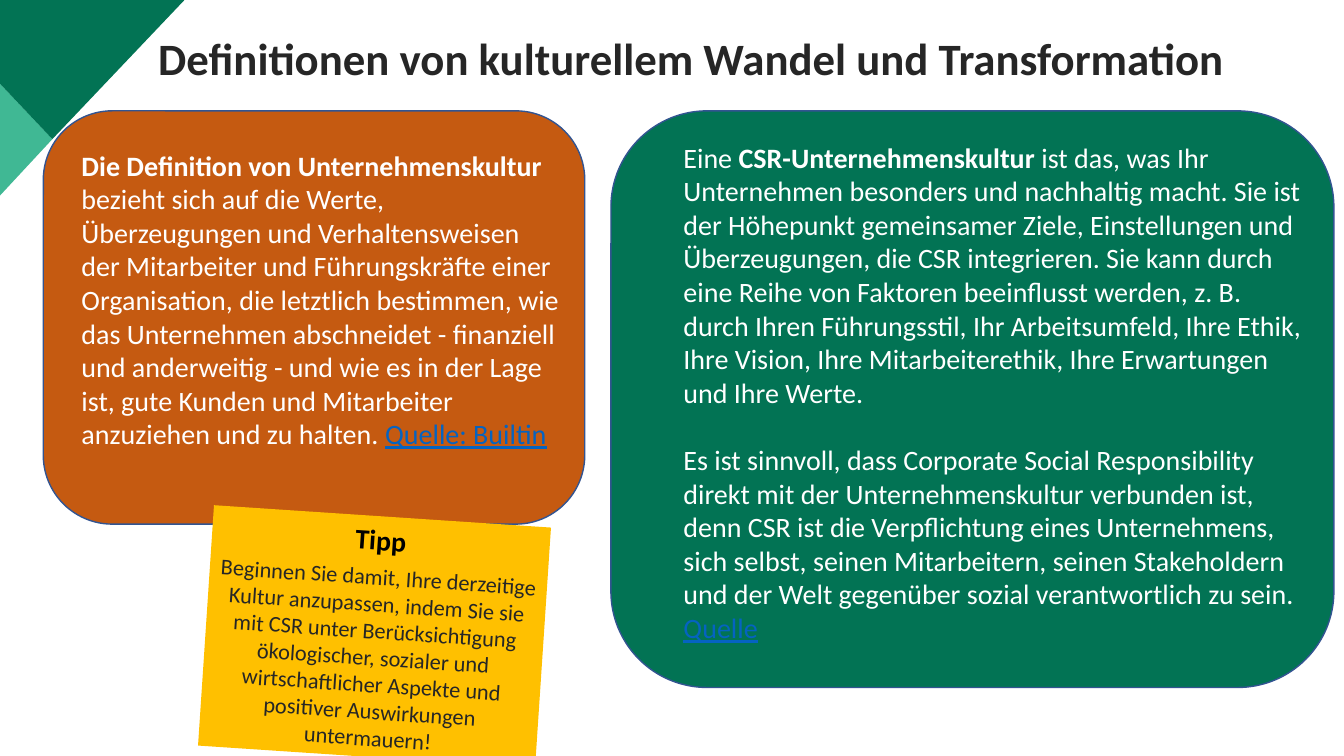
from pptx import Presentation
from pptx.dml.color import RGBColor
from pptx.enum.shapes import MSO_SHAPE
from pptx.enum.text import MSO_ANCHOR, PP_ALIGN
from pptx.util import Inches, Pt

ROUNDED, RECTANGLE = MSO_SHAPE.ROUNDED_RECTANGLE, MSO_SHAPE.RECTANGLE
TOP, MIDDLE = MSO_ANCHOR.TOP, MSO_ANCHOR.MIDDLE
LEFT, CENTER = PP_ALIGN.LEFT, PP_ALIGN.CENTER

MINT = RGBColor(0x40, 0xB8, 0x94)
GREEN = RGBColor(0x02, 0x73, 0x54)
ORANGE = RGBColor(0xC5, 0x5A, 0x11)
YELLOW = RGBColor(0xFF, 0xC0, 0x00)
OUTLINE = RGBColor(0x32, 0x54, 0x91)
LINK = RGBColor(0x05, 0x63, 0xC1)
DARK = RGBColor(0x26, 0x26, 0x26)
BLACK = RGBColor(0, 0, 0)
WHITE = RGBColor(0xFF, 0xFF, 0xFF)

BOLD = {"bold": True}
SOURCE = {"color": LINK, "underline": True}

CORNER = [
    (MINT, [(0, 0.83), (0.52, 1.38), (0, 1.94)]),
    (GREEN, [(0, 0), (1.83, 0), (0.52, 1.38), (0, 0.83)]),
]

TITLE = [[("Definitionen von kulturellem Wandel und Transformation", BOLD)]]

CULTURE = [[
    ("Die Definition von Unternehmenskultur ", BOLD),
    ("bezieht sich auf die Werte, Überzeugungen und Verhaltensweisen der "
     "Mitarbeiter und Führungskräfte einer Organisation, die letztlich "
     "bestimmen, wie das Unternehmen abschneidet - finanziell und "
     "anderweitig - und wie es in der Lage ist, gute Kunden und Mitarbeiter "
     "anzuziehen und zu halten. ", {}),
    ("Quelle: Builtin", SOURCE),
]]

CSR = [
    [
        ("Eine ", {}),
        ("CSR-Unternehmenskultur", BOLD),
        (" ist das, was Ihr Unternehmen besonders und nachhaltig macht. Sie "
         "ist der Höhepunkt gemeinsamer Ziele, Einstellungen und "
         "Überzeugungen, die CSR integrieren. Sie kann durch eine Reihe von "
         "Faktoren beeinflusst werden, z. B. durch Ihren Führungsstil, Ihr "
         "Arbeitsumfeld, Ihre Ethik, Ihre Vision, Ihre Mitarbeiterethik, Ihre "
         "Erwartungen und Ihre Werte.", {}),
    ],
    [
        ("Es ist sinnvoll, dass Corporate Social Responsibility direkt mit "
         "der Unternehmenskultur verbunden ist, denn CSR ist die "
         "Verpflichtung eines Unternehmens, sich selbst, seinen Mitarbeitern, "
         "seinen Stakeholdern und der Welt gegenüber sozial verantwortlich zu "
         "sein. ", {}),
        ("Quelle", SOURCE),
    ],
]

TIP = [
    [("Tipp", {"bold": True, "size": 20, "color": BLACK})],
    [("Beginnen Sie damit, Ihre derzeitige Kultur anzupassen, indem Sie sie "
      "mit CSR unter Berücksichtigung ökologischer, sozialer und "
      "wirtschaftlicher Aspekte und positiver Auswirkungen untermauern!", {})],
]


def write_text(box, paragraphs, size=20, color=WHITE, align=LEFT, anchor=TOP,
               gap=0, line_spacing=1.0):
    frame = box.text_frame
    frame.word_wrap = True
    frame.vertical_anchor = anchor
    for index, spans in enumerate(paragraphs):
        para = frame.add_paragraph() if index else frame.paragraphs[0]
        para.alignment = align
        para.line_spacing = line_spacing
        para.space_before = Pt(gap if index else 0)
        for text, style in spans:
            span = para.add_run()
            span.text = text
            span.font.name = "Calibri"
            span.font.size = Pt(style.get("size", size))
            span.font.bold = style.get("bold", False)
            span.font.underline = style.get("underline", False)
            span.font.color.rgb = style.get("color", color)


def paint(shape, fill, line=None):
    shape.shadow.inherit = False
    shape.fill.solid()
    shape.fill.fore_color.rgb = fill
    if line is None:
        shape.line.fill.background()
    else:
        shape.line.color.rgb = line
        shape.line.width = Pt(1)


def add_panel(page, kind, place, fill, line=None):
    panel = page.shapes.add_shape(kind, *map(Inches, place))
    paint(panel, fill, line)
    return panel


def add_text(page, place, paragraphs, **style):
    box = page.shapes.add_textbox(*map(Inches, place))
    write_text(box, paragraphs, **style)


def add_corner(page):
    for fill, points in CORNER:
        start, *rest = [(Inches(x), Inches(y)) for x, y in points]
        builder = page.shapes.build_freeform(*start)
        builder.add_line_segments(rest, close=True)
        paint(builder.convert_to_shape(), fill)


def main():
    deck = Presentation()
    deck.slide_width, deck.slide_height = Inches(13.33), Inches(7.5)
    page = deck.slides.add_slide(deck.slide_layouts[6])

    add_corner(page)
    add_panel(page, ROUNDED, (0.43, 1.1, 5.37, 4.1), ORANGE, OUTLINE)
    add_text(page, (1.47, 0.32, 11.59, 1.04), TITLE,
             size=32, color=DARK, line_spacing=0.9)
    add_text(page, (0.71, 1.42, 4.94, 3.57), CULTURE)
    add_panel(page, ROUNDED, (6.06, 1.1, 7.17, 5.72), GREEN, OUTLINE)
    add_text(page, (6.68, 1.34, 6.41, 3.13), CSR, gap=24)

    note = add_panel(page, RECTANGLE, (2.04, 5.12, 3.35, 2.39), YELLOW)
    note.rotation = 3.8
    write_text(note, TIP, size=16, color=DARK, align=CENTER, anchor=MIDDLE,
               gap=5)

    deck.save("out.pptx")


if __name__ == "__main__":
    main()
